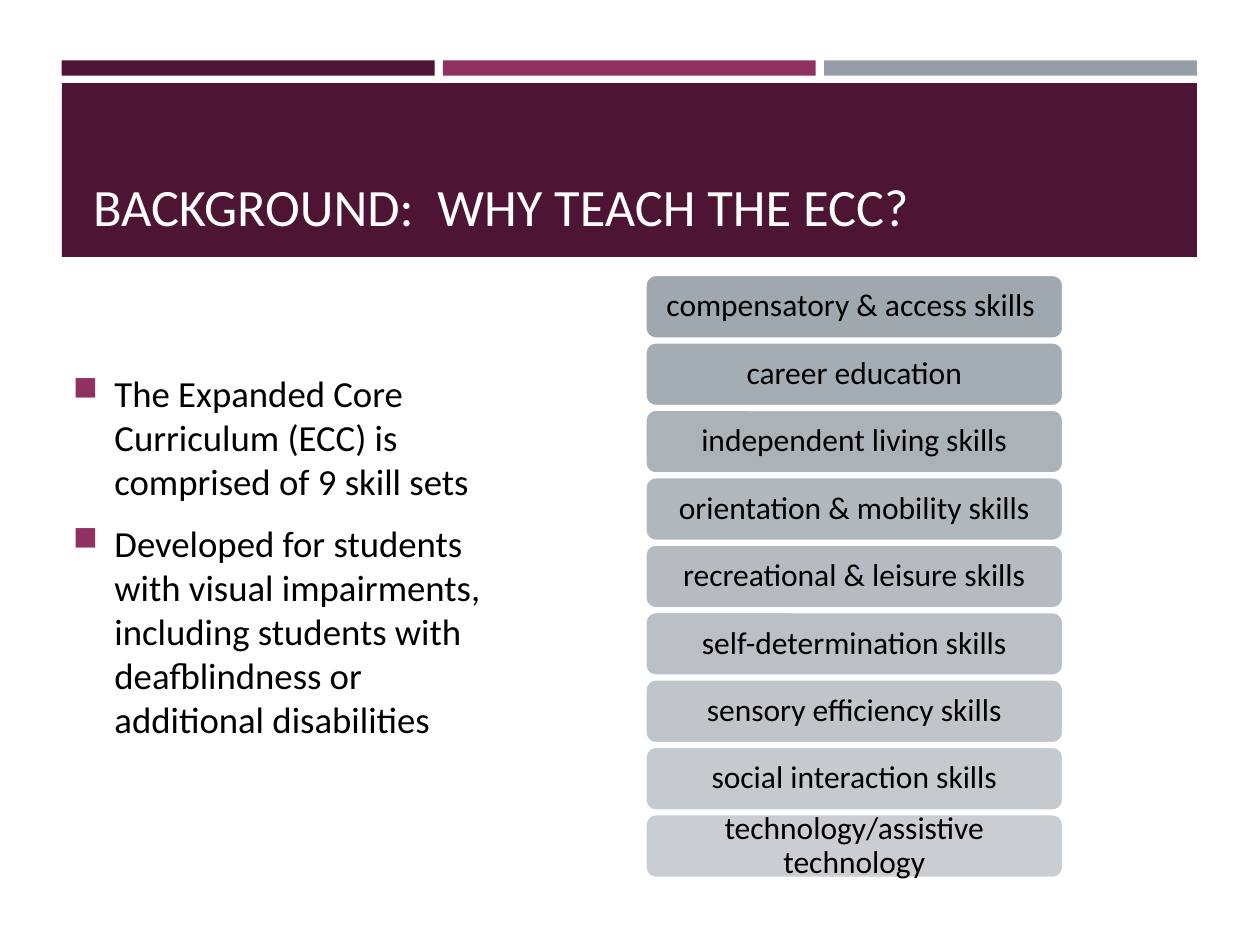
from lxml.etree import SubElement
from pptx import Presentation
from pptx.dml.color import RGBColor
from pptx.enum.shapes import MSO_SHAPE as Shape
from pptx.enum.text import MSO_ANCHOR as Anchor, PP_ALIGN as Align
from pptx.oxml.ns import qn
from pptx.util import Inches, Pt

PLUM, BERRY, GREY = "4D1434", "903163", "969FA7"
WHITE, BLACK = "FFFFFF", "000000"

TITLE = "BACKGROUND:  WHY TEACH THE ECC?"
POINTS = [
    "The Expanded Core Curriculum (ECC) is comprised of 9 skill sets",
    "Developed for students with visual impairments, including students "
    "with deafblindness or additional disabilities",
]
SKILLS = [
    "compensatory & access skills ",
    "career education",
    "independent living skills",
    "orientation & mobility skills",
    "recreational & leisure skills",
    "self-determination skills",
    "sensory efficiency skills",
    "social interaction skills",
    "technology/assistive technology",
]


def color(hex_value):
    return RGBColor.from_string(hex_value)


class SlideBuilder:
    font = "Calibri"

    def __init__(self, slide):
        self.slide = slide

    def format_para(self, para, size, hex_value):
        for span in para.runs:
            span.font.name = self.font
            span.font.size = Pt(size)
            span.font.color.rgb = color(hex_value)

    def block(self, shapes, kind, place, fill):
        shape = shapes.add_shape(kind, *map(Inches, place))
        shape.shadow.inherit = False
        shape.fill.solid()
        shape.fill.fore_color.rgb = color(fill)
        shape.line.fill.background()
        return shape

    def bar(self, place, fill):
        return self.block(self.slide.shapes, Shape.RECTANGLE, place, fill)

    def text(self, place, lines, size, hex_value, anchor):
        box = self.slide.shapes.add_textbox(*map(Inches, place))
        frame = box.text_frame
        frame.word_wrap = True
        frame.vertical_anchor = anchor
        frame.text = "\n".join(lines)
        for para in frame.paragraphs:
            self.format_para(para, size, hex_value)
        return frame

    def bullets(self, place, lines, size):
        frame = self.text(place, lines, size, BLACK, Anchor.MIDDLE)
        for para in frame.paragraphs:
            para.space_before = Pt(0.2 * size)
            para.space_after = Pt(6)
            props = para._p.get_or_add_pPr()
            props.set("marL", str(Inches(0.33)))
            props.set("indent", str(-Inches(0.33)))
            tint = SubElement(props, qn("a:buClr"))
            SubElement(tint, qn("a:srgbClr"), val=BERRY)
            SubElement(props, qn("a:buSzPct"), val="92000")
            SubElement(props, qn("a:buChar"), char="■")

    def pill(self, group, place, label, opacity):
        """Add a rounded label to the group, its fill opacity in percent."""
        pill = self.block(group.shapes, Shape.ROUNDED_RECTANGLE, place, GREY)
        tint = pill.fill._xPr.find(qn("a:solidFill"))[0]
        SubElement(tint, qn("a:alpha"), val=str(opacity * 1000))
        pill.line.color.rgb = color(WHITE)
        pill.line.width = Pt(1.75)
        frame = pill.text_frame
        frame.word_wrap = True
        frame.vertical_anchor = Anchor.MIDDLE
        frame.margin_left = frame.margin_right = Inches(0.07)
        frame.margin_top = frame.margin_bottom = Inches(0.04)
        frame.text = label
        para = frame.paragraphs[0]
        para.alignment = Align.CENTER
        para.line_spacing = 0.9
        self.format_para(para, 18, BLACK)


def main():
    deck = Presentation()
    deck.slide_width, deck.slide_height = Inches(10), Inches(7.5)
    page = SlideBuilder(deck.slides.add_slide(deck.slide_layouts[6]))

    for column, fill in enumerate([PLUM, BERRY, GREY]):
        page.bar((0.49 + 3.025 * column, 0.48, 2.96, 0.12), fill)
    page.bar((0.49, 0.66, 9.01, 1.38), PLUM)
    page.text((0.64, 0.75, 8.74, 1.18), [TITLE], 30, WHITE, Anchor.BOTTOM)
    page.bullets((0.48, 3.39, 3.51, 2.04), POINTS, 21)

    skill_list = page.slide.shapes.add_group_shape()
    for row, skill in enumerate(SKILLS):
        place = (5.12, 2.18 + 0.535 * row, 3.32, 0.51)
        page.pill(skill_list, place, skill, 90 - 5 * row)

    deck.save("out.pptx")


if __name__ == "__main__":
    main()
